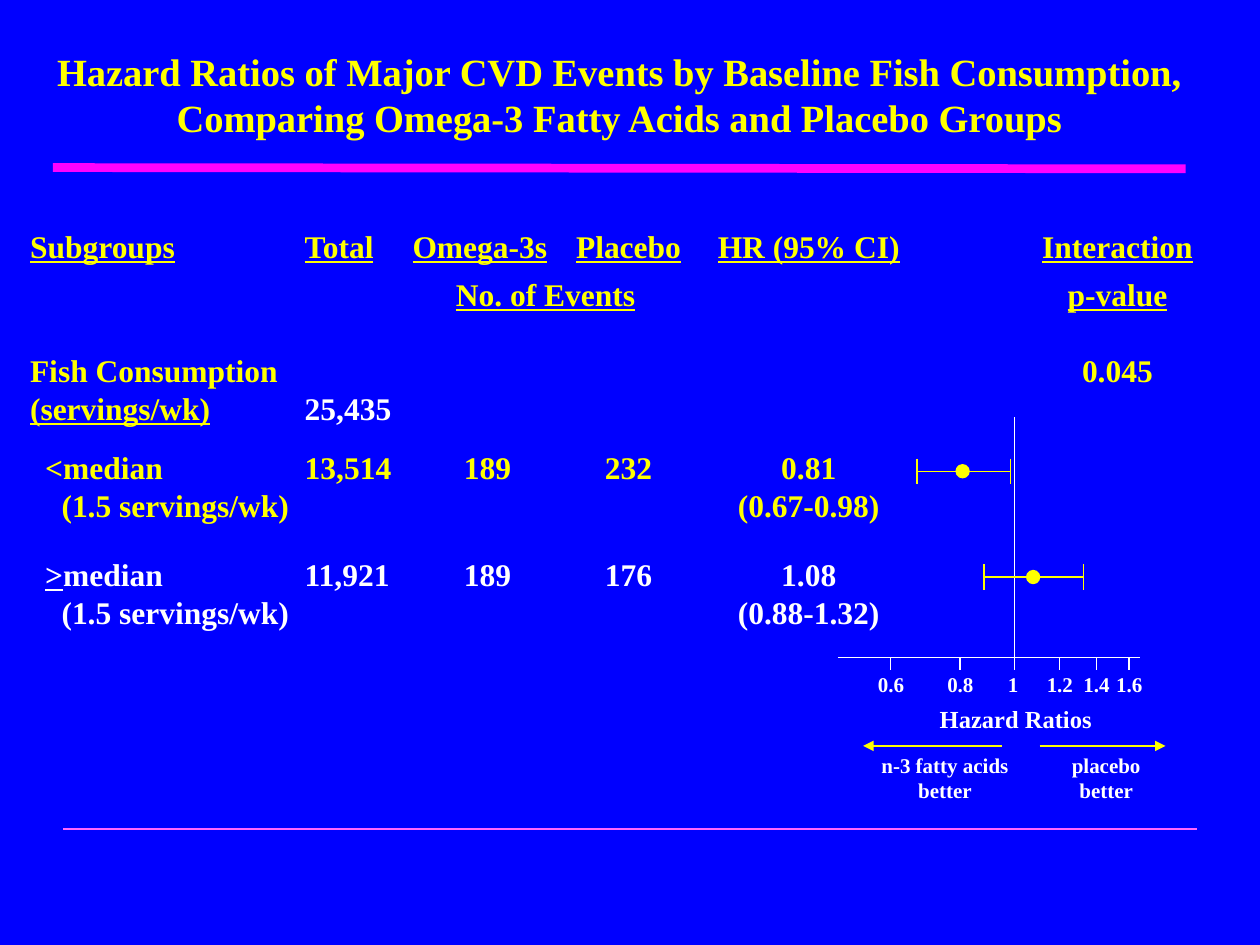
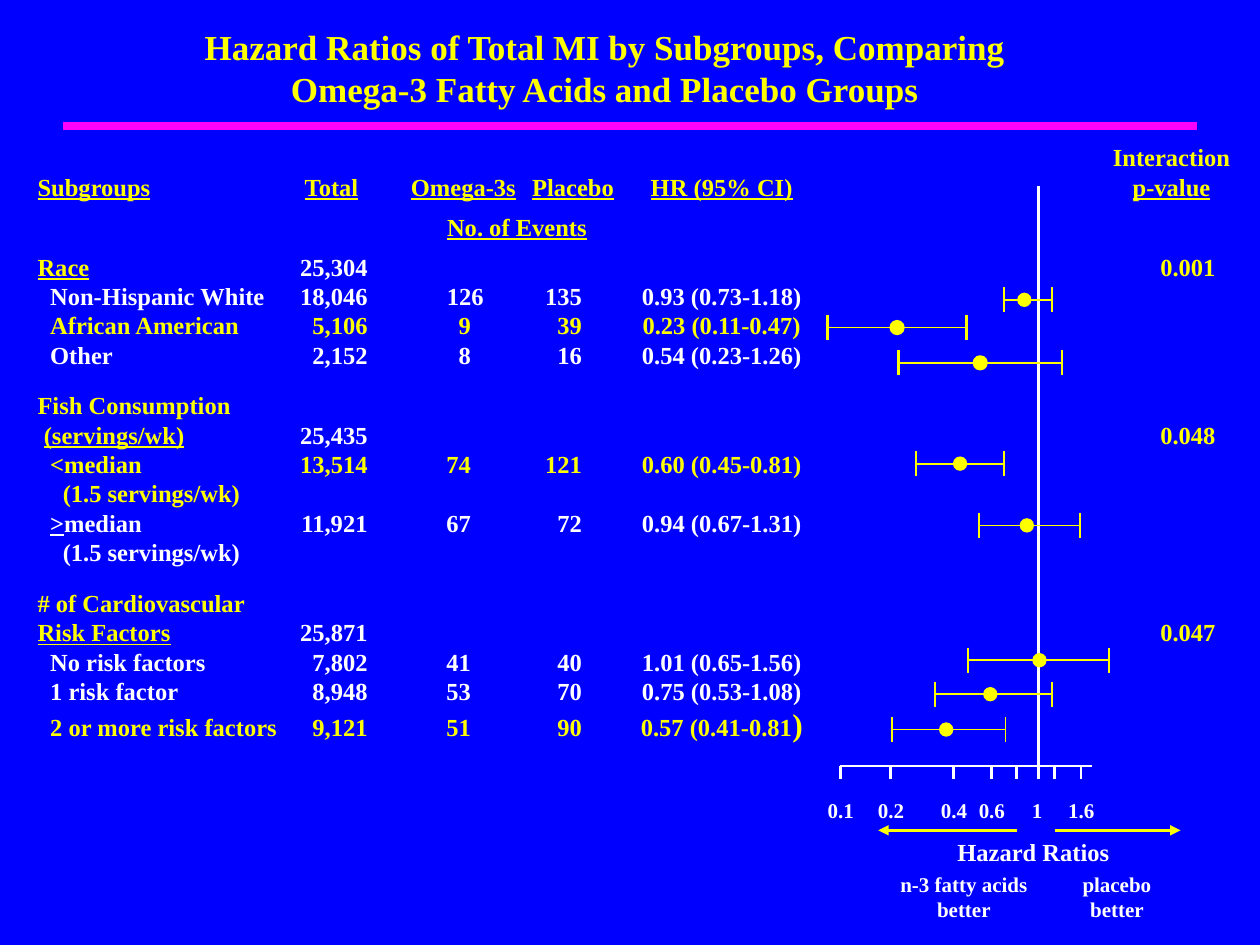
from lxml import etree
from pptx import Presentation
from pptx.dml.color import RGBColor
from pptx.enum.shapes import MSO_CONNECTOR, MSO_SHAPE
from pptx.enum.text import MSO_AUTO_SIZE, PP_ALIGN
from pptx.oxml.ns import qn
from pptx.util import Inches, Pt

STRAIGHT = MSO_CONNECTOR.STRAIGHT
OVAL = MSO_SHAPE.OVAL
LEFT, CENTER = PP_ALIGN.LEFT, PP_ALIGN.CENTER
FIT = MSO_AUTO_SIZE.SHAPE_TO_FIT_TEXT

FONT = "Times New Roman"
BLUE, YELLOW, WHITE = "0000FF", "FFFF00", "FFFFFF"
MAGENTA, PINK = "FF00FF", "FF66FF"

# Row styles: colour of the row, colour of its total
KEY, PLAIN, GROUP = (YELLOW, YELLOW), (WHITE, WHITE), (YELLOW, WHITE)


def rgb(value):
    return RGBColor.from_string(value)


def style(r, size, color, underline=False):
    r.font.name, r.font.size, r.font.bold = FONT, Pt(size), True
    r.font.color.rgb = rgb(color)
    r.font.underline = underline


def text_box(s, x, y, w, h):
    tf = s.shapes.add_textbox(Inches(x), Inches(y), Inches(w), Inches(h)).text_frame
    tf.word_wrap = True
    tf.auto_size = FIT
    return tf


def label(s, text, x, y, w, h, size, color=WHITE, align=LEFT):
    tf = text_box(s, x, y, w, h)
    tf.text = text
    for p in tf.paragraphs:
        p.alignment = align
        for r in p.runs:
            style(r, size, color)


def line(s, x1, y1, x2, y2, color, width, arrow=False):
    c = s.shapes.add_connector(STRAIGHT, Inches(x1), Inches(y1), Inches(x2), Inches(y2))
    c.line.color.rgb = rgb(color)
    c.line.width = Pt(width)
    if arrow:
        etree.SubElement(c.line._get_or_add_ln(), qn("a:tailEnd"), type="triangle")
    etree.SubElement(c._element.spPr, qn("a:effectLst"))


def new_slide(prs, title, title_box, size, rule):
    s = prs.slides.add_slide(prs.slide_layouts[6])
    s.background.fill.solid()
    s.background.fill.fore_color.rgb = rgb(BLUE)
    label(s, title, *title_box, size, YELLOW, CENTER)
    line(s, *rule, MAGENTA, 5)
    return s


def add_runs(p, text, size, color):
    """Parts between underscores are underlined."""
    for i, part in enumerate(text.split("_")):
        if part:
            r = p.add_run()
            r.text = part
            style(r, size, color, i % 2 == 1)


def subgroup_rows(s, box, size, rows):
    """Rows of (space before, indent, style, tab stops, label, cells)."""
    tf = text_box(s, *box)
    for i, (space, indent, (color, total_color), stops, name, cells) in enumerate(rows):
        p = tf.add_paragraph() if i else tf.paragraphs[0]
        p.space_before = Pt(space)
        used = [(indent, "l")] if indent else []
        used += [stops[column] for column in cells]
        if used:
            tabs = etree.SubElement(p._p.get_or_add_pPr(), qn("a:tabLst"))
            for pos, align in used:
                etree.SubElement(tabs, qn("a:tab"), pos=str(Inches(pos)), algn=align)
        add_runs(p, "\t" + name if indent else name, size, color)
        for column, text in cells.items():
            add_runs(p, "\t" + text if "_" not in text else "\t" + text, size,
                     total_color if column == "total" else color)
    return tf


def data(total, omega, placebo, hr):
    return {"total": total, "omega": omega, "placebo": placebo, "hr": hr}


def axis(s, x, y, w, ticks, ref, ref_top, label_gap, width):
    """Ticks of (offset, label) and the reference line at a ratio of 1."""
    line(s, x, y, x + w, y, WHITE, width)
    line(s, x + ref, ref_top, x + ref, y + 0.1, WHITE, width)
    label(s, "1", x + ref - 0.15, y + label_gap, 0.35, 0.3, 12)
    for dx, text in ticks:
        line(s, x + dx, y, x + dx, y + 0.1, WHITE, width)
        if text:
            label(s, text, x + dx - 0.2, y + label_gap, 0.5, 0.3, 12)


def interval(s, low, mid, high, y, bar_width, cap_width):
    line(s, low, y, high, y, YELLOW, bar_width)
    for x in (low, high):
        line(s, x, y - 0.1, x, y + 0.1, YELLOW, cap_width)
    dot = s.shapes.add_shape(OVAL, Inches(mid - 0.05), Inches(y - 0.05), Inches(0.1), Inches(0.1))
    dot.shadow.inherit = False
    dot.fill.solid()
    dot.fill.fore_color.rgb = rgb(YELLOW)
    dot.line.color.rgb = rgb(YELLOW)
    dot.line.width = Pt(cap_width)


def direction_key(s, x, y, heading, captions_y, captions):
    line(s, x + 1.1, y, x, y, YELLOW, 1.5, arrow=True)
    line(s, x + 1.4, y, x + 2.4, y, YELLOW, 1.5, arrow=True)
    label(s, "Hazard Ratios", *heading, 1.5, 0.34, 14)
    for text, left, w in captions:
        label(s, text + "\nbetter", left, captions_y, w, 0.5, 12, WHITE, CENTER)


def fish_slide(prs):
    s = new_slide(prs, "Hazard Ratios of Major CVD Events by Baseline Fish Consumption, "
                  "Comparing Omega-3 Fatty Acids and Placebo Groups",
                  (0.29, 0.33, 9.25, 0.84), 22, (0.42, 1.33, 9.41, 1.34))
    # Subgroup rows
    body = {"total": (2.18, "l"), "omega": (3.63, "ctr"), "placebo": (4.75, "ctr"),
            "hr": (6.18, "ctr"), "p": (8.63, "ctr")}
    head = body | {"omega": (3.57, "ctr"), "events": (3.38, "l")}
    subgroup_rows(s, (0.14, 1.75, 9.71, 3.33), 18, [
        (0, 0, KEY, head, "_Subgroups_",
         data("_Total_", "_Omega-3s_", "_Placebo_", "_HR (95% CI)_") | {"p": "_Interaction_"}),
        (6, 0, KEY, head, "", {"events": "_No. of Events_", "p": "_p-value_"}),
        (22, 0, GROUP, body, "Fish Consumption", {"p": "0.045"}),
        (0, 0, GROUP, body, "_(servings/wk)_", {"total": "25,435"}),
        (12, 0.12, KEY, body, "<median", data("13,514", "189", "232", "0.81")),
        (0, 0.25, KEY, body, "(1.5 servings/wk)", {"hr": "(0.67-0.98)"}),
        (18, 0.12, PLAIN, body, "_>_median", data("11,921", "189", "176", "1.08")),
        (0, 0.25, PLAIN, body, "(1.5 servings/wk)", {"hr": "(0.88-1.32)"}),
    ])
    # Forest plot
    axis(s, 6.65, 5.22, 2.4, [(0.42, "0.6"), (0.97, "0.8"), (1.76, "1.2"), (2.05, "1.4"),
                              (2.31, "1.6")], 1.4, 3.31, 0.06, 0.75)
    interval(s, 7.28, 7.64, 8.02, 3.74, 0.75, 1)
    interval(s, 7.81, 8.2, 8.6, 4.58, 0.75, 1)
    direction_key(s, 6.85, 5.92, (7.36, 5.54), 5.92,
                  [("n-3 fatty acids", 6.85, 1.3), ("placebo", 8.13, 1.3)])
    line(s, 0.5, 6.58, 9.5, 6.58, PINK, 1)


def mi_slide(prs):
    s = new_slide(prs, "Hazard Ratios of Total MI by Subgroups, Comparing "
                  "Omega-3 Fatty Acids and Placebo Groups",
                  (1.4, 0.15, 6.8, 0.77), 20, (0.5, 1, 9.5, 1))
    # Subgroup rows
    head = {"total": (2.12, "l"), "omega": (3.38, "ctr"), "placebo": (4.25, "ctr"),
            "hr": (5.43, "ctr"), "p": (9, "ctr"), "events": (3.25, "l")}
    body = {"total": (2.62, "r"), "omega": (3.44, "r"), "placebo": (4.32, "r"),
            "hr": (5.43, "ctr"), "p": (9.13, "ctr")}
    wide = body | {"omega": (3.54, "r")}
    tf = subgroup_rows(s, (0.2, 1.08, 9.8, 4.91), 14, [
        (0, 0, KEY, head, "", {"p": "Interaction"}),
        (0, 0, KEY, head, "_Subgroups_",
         data("_Total_", "_Omega-3s_", "_Placebo_", "_HR (95% CI)_") | {"p": "_p-value_"}),
        (6, 0, KEY, head, "", {"events": "_No. of Events_"}),
        (6, 0, GROUP, body, "_Race_", {"total": "25,304", "p": "0.001"}),
        (0, 0.1, PLAIN, wide, "Non-Hispanic White",
         data("18,046", "126", "135", "0.93 (0.73-1.18)")),
        (0, 0.1, KEY, body, "African American", data("5,106", "9", "39", "0.23 (0.11-0.47)")),
        (0, 0.1, PLAIN, body, "Other", data("2,152", "8", "16", "0.54 (0.23-1.26)")),
        (12, 0, GROUP, body, "Fish Consumption", {}),
        (0, 0.05, GROUP, body, "_(servings/wk)_", {"total": "25,435", "p": "0.048"}),
        (0, 0.1, KEY, body, "<median", data("13,514", "74", "121", "0.60 (0.45-0.81)")),
        (0, 0.2, KEY, body, "(1.5 servings/wk)", {}),
        (0, 0.1, PLAIN, body, "_>_median", data("11,921", "67", "72", "0.94 (0.67-1.31)")),
        (0, 0.2, PLAIN, body, "(1.5 servings/wk)", {}),
        (12, 0, GROUP, body, "# of Cardiovascular", {}),
        (0, 0, GROUP, body, "_Risk Factors_", {"total": "25,871", "p": "0.047"}),
        (0, 0.1, PLAIN, body, "No risk factors", data("7,802", "41", "40", "1.01 (0.65-1.56)")),
        (0, 0.1, PLAIN, body, "1 risk factor", data("8,948", "53", "70", "0.75 (0.53-1.08)")),
        (0, 0.1, KEY, body, "2 or more risk factors",
         data("9,121", "51", "90", "0.57 (0.41-0.81")),
    ])
    add_runs(tf.paragraphs[-1], ")", 18, YELLOW)
    # Forest plot
    axis(s, 6.67, 6.08, 2, [(0, "0.1"), (0.4, "0.2"), (0.9, "0.4"), (1.2, "0.6"), (1.4, ""),
                            (1.7, ""), (1.91, "1.6")], 1.57, 1.48, 0.2, 1.5)
    for low, mid, high, y, bar_width, cap_width in [
            (7.97, 8.13, 8.35, 2.38, 1, 1),
            (6.57, 7.12, 7.67, 2.6, 0.75, 1.5),
            (7.13, 7.78, 8.43, 2.88, 0.75, 1.5),
            (7.27, 7.62, 7.97, 3.68, 1, 1),
            (7.77, 8.15, 8.57, 4.17, 1, 1),
            (7.68, 8.25, 8.8, 5.24, 1, 1),
            (7.42, 7.86, 8.35, 5.51, 1, 1),
            (7.08, 7.51, 7.98, 5.79, 1, 1)]:
        interval(s, low, mid, high, y, bar_width, cap_width)
    direction_key(s, 6.97, 6.59, (7.5, 6.59), 6.87,
                  [("n-3 fatty acids", 7, 1.3), ("placebo", 8.33, 1.07)])


def main():
    prs = Presentation()
    prs.slide_width, prs.slide_height = Inches(10), Inches(7.5)
    fish_slide(prs)
    mi_slide(prs)
    prs.save("out.pptx")


if __name__ == "__main__":
    main()
